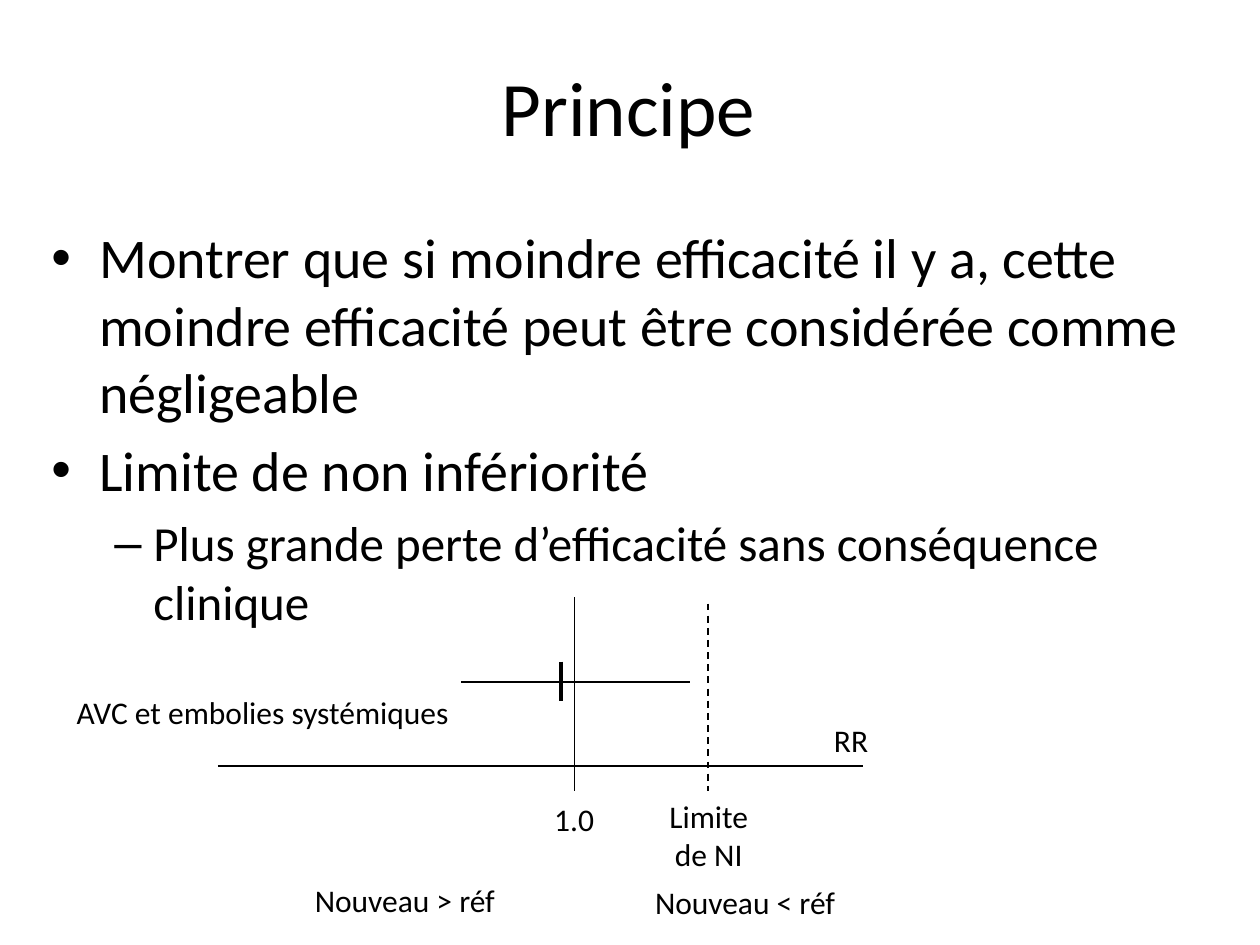
from lxml import etree
from pptx import Presentation
from pptx.dml.color import RGBColor
from pptx.enum.dml import MSO_LINE
from pptx.enum.shapes import MSO_CONNECTOR
from pptx.enum.text import MSO_ANCHOR, MSO_AUTO_SIZE, PP_ALIGN
from pptx.oxml.ns import qn
from pptx.util import Inches, Pt

BLACK = RGBColor(0, 0, 0)

deck = Presentation()
deck.slide_width, deck.slide_height = Inches(10), Inches(7.5)
slide = deck.slides.add_slide(deck.slide_layouts[6])


def add_box(left, top, width, height, wrap=True):
    box = slide.shapes.add_textbox(
        Inches(left), Inches(top), Inches(width), Inches(height))
    box.text_frame.word_wrap = wrap
    return box.text_frame


def add_run(para, text, size):
    run = para.add_run()
    run.text = text
    run.font.name = "Calibri"
    run.font.size = Pt(size)
    run.font.color.rgb = BLACK


# Title
frame = add_box(0.49, 0.21, 9, 1.25)
frame.vertical_anchor = MSO_ANCHOR.MIDDLE
para = frame.paragraphs[0]
para.alignment = PP_ALIGN.CENTER
add_run(para, "Principe", 44)

# Bullets: text, level, size, margin, hanging indent, mark, space before
points = [
    ("Montrer que si moindre efficacité il y a, cette moindre efficacité "
     "peut être considérée comme négligeable", 0, 32, 0.38, 0.38, "•", 0),
    ("Limite de non infériorité", 0, 32, 0.38, 0.38, "•", 6.4),
    ("Plus grande perte d’efficacité sans conséquence clinique",
     1, 28, 0.81, 0.31, "–", 5.6),
]
frame = add_box(0.31, 1.72, 9.27, 2.08)
for i, (text, level, size, margin, hang, mark, space) in enumerate(points):
    para = frame.paragraphs[0] if i == 0 else frame.add_paragraph()
    para.level = level
    para.space_before = Pt(space)
    props = para._p.get_or_add_pPr()
    props.set("marL", str(Inches(margin)))
    props.set("indent", str(-Inches(hang)))
    etree.SubElement(props, qn("a:buFont"), typeface="Arial")
    etree.SubElement(props, qn("a:buChar"), char=mark)
    add_run(para, text, size)

# Axis, no-effect line, confidence interval, estimate, limit
lines = [
    (1.73, 6.08, 6.85, 6.08, 1, None),
    (4.56, 4.74, 4.56, 6.28, 1, None),
    (3.66, 5.41, 5.48, 5.41, 1, None),
    (4.45, 5.25, 4.45, 5.56, 2.5, None),
    (5.62, 4.79, 5.62, 6.28, 1, MSO_LINE.DASH),
]
for x1, y1, x2, y2, width, dash in lines:
    line = slide.shapes.add_connector(
        MSO_CONNECTOR.STRAIGHT, Inches(x1), Inches(y1), Inches(x2), Inches(y2))
    line.line.color.rgb = BLACK
    line.line.width = Pt(width)
    if dash:
        line.line.dash_style = dash
    etree.SubElement(line._element.spPr, qn("a:effectLst"))

# Diagram labels
labels = [
    ("1.0", 4.3, 6.3, 0.52),
    ("Nouveau > réf", 2.4, 6.94, 1.65),
    ("Nouveau < réf", 5.1, 6.96, 1.65),
    ("AVC et embolies systémiques", 0.51, 5.45, 3.19),
    ("RR", 6.52, 5.67, 0.48),
]
for text, left, top, width in labels:
    frame = add_box(left, top, width, 0.4, wrap=False)
    frame.auto_size = MSO_AUTO_SIZE.SHAPE_TO_FIT_TEXT
    add_run(frame.paragraphs[0], text, 18)

# Limit label, wrapped and centred under its line
frame = add_box(5.19, 6.28, 0.87, 0.71)
frame.auto_size = MSO_AUTO_SIZE.SHAPE_TO_FIT_TEXT
para = frame.paragraphs[0]
para.alignment = PP_ALIGN.CENTER
add_run(para, "Limite de NI", 18)

deck.save("out.pptx")
